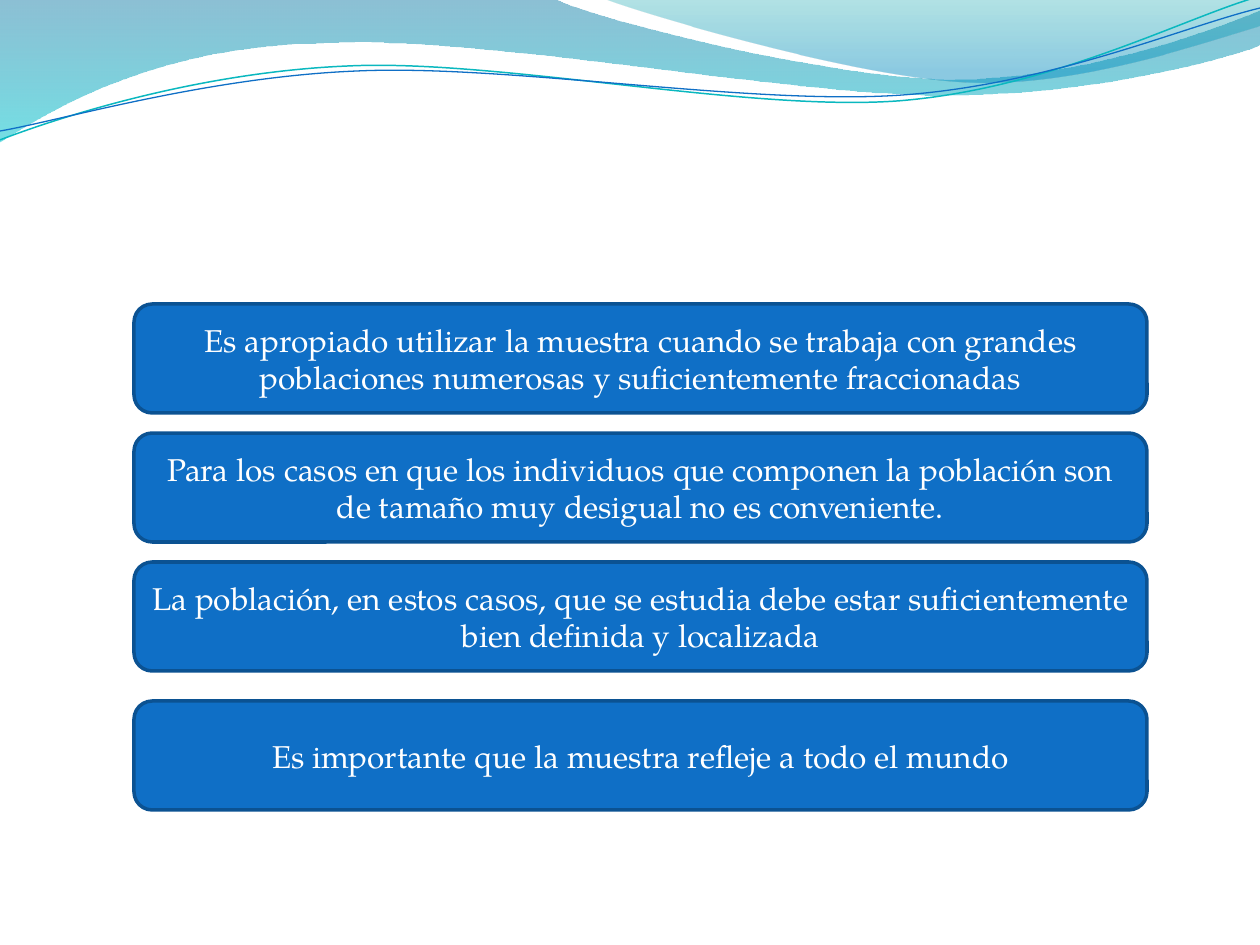
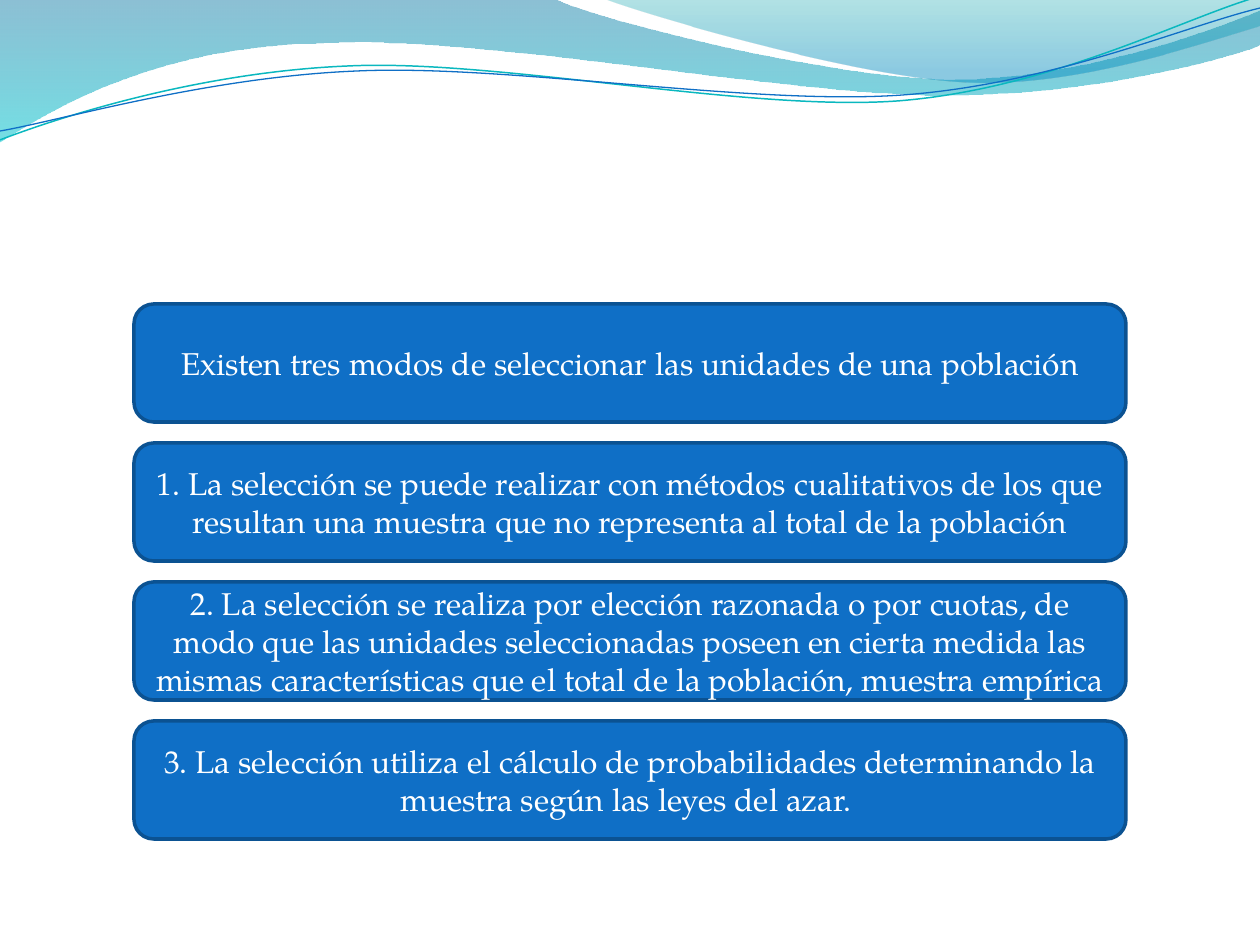
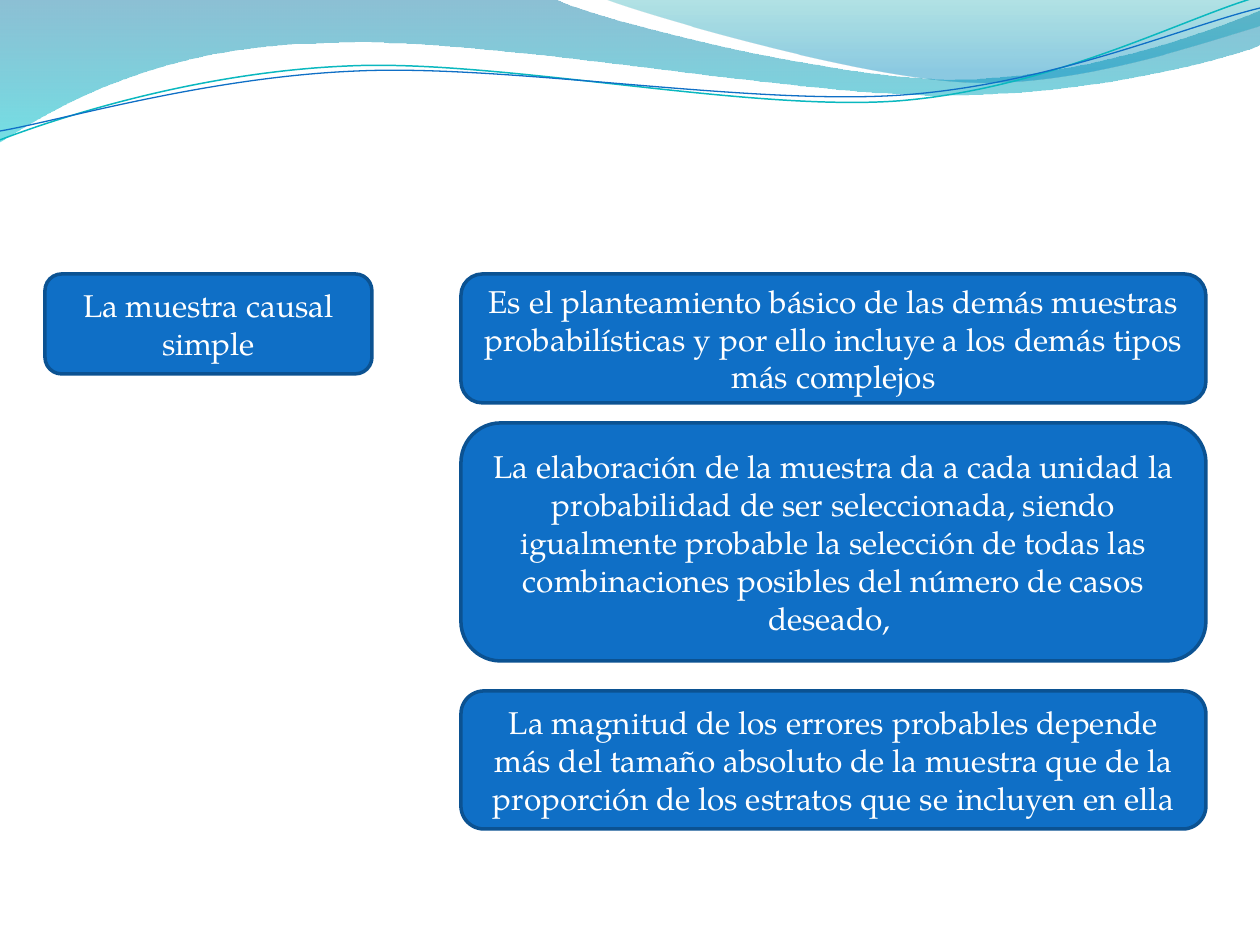
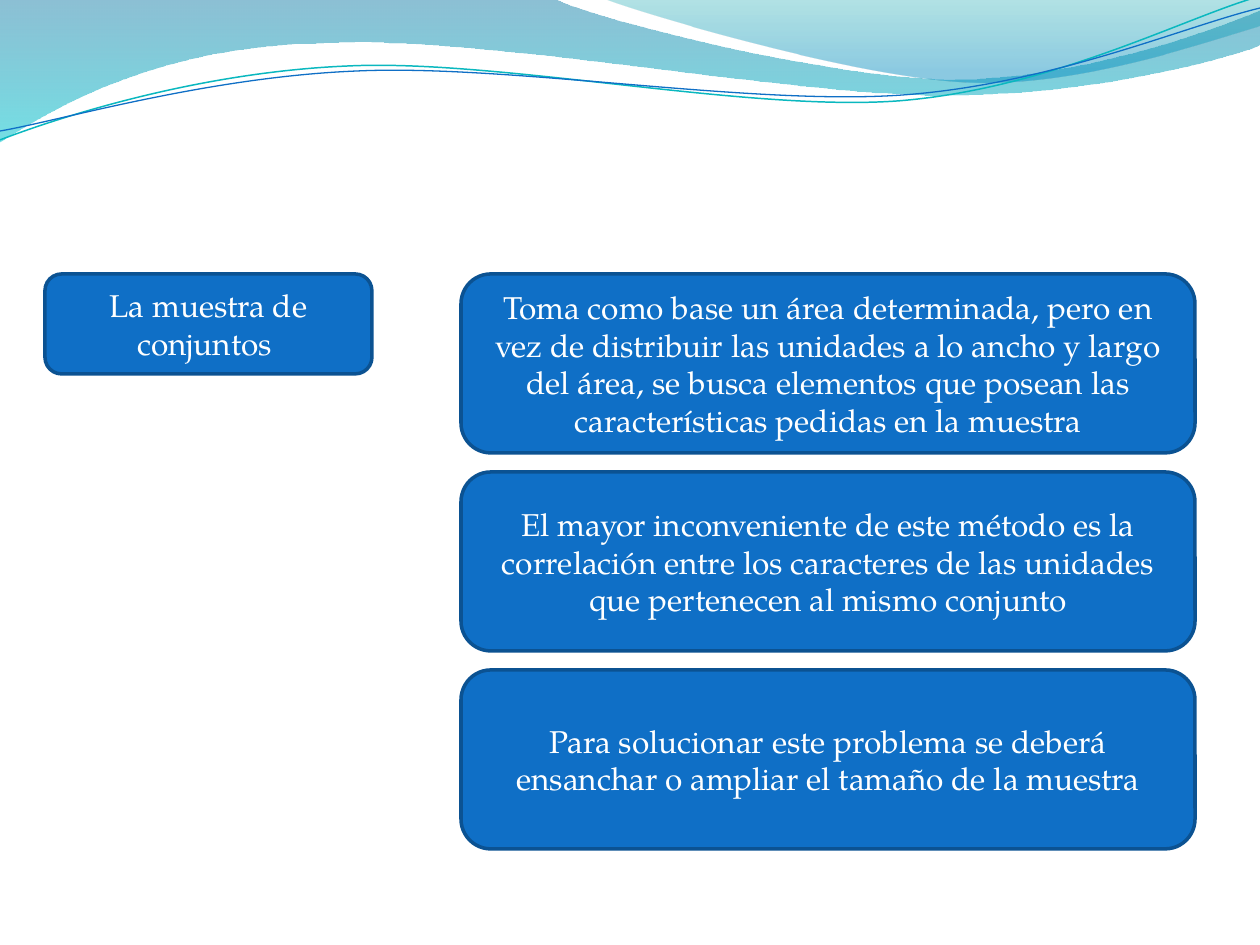
"""Build four slides on choosing a sample, under a shared wave header."""
from math import cos, radians, sin

from lxml.etree import SubElement
from pptx import Presentation
from pptx.dml.color import RGBColor
from pptx.enum.shapes import MSO_SHAPE
from pptx.enum.text import MSO_ANCHOR, PP_ALIGN
from pptx.oxml.ns import qn
from pptx.util import Inches, Pt

PX = Inches(1) / 126
FONT = "TeX Gyre Pagella"
WHITE = RGBColor(0xFF, 0xFF, 0xFF)
BLUE = RGBColor(0x0F, 0x6F, 0xC6)
NAVY = RGBColor(0x0B, 0x52, 0x92)
TEAL = RGBColor(0x0A, 0xB8, 0xBF)
WAVE_TOP = RGBColor(0x00, 0x74, 0xA1)
WAVE_BOTTOM = RGBColor(0x00, 0xC6, 0xCF)
CREST_TOP = RGBColor(0x00, 0xA1, 0xA9)
CREST_BOTTOM = RGBColor(0x00, 0x8B, 0xBF)

WAVE = [
    [(0, 0)], [(554, -1)],
    [(600, 21), (837, 79), (955, 79)],
    [(1074, 79), (1207, 33), (1260, 11)],
    [(1261, 45)],
    [(1239, 55), (1096, 96), (940, 95)],
    [(784, 95), (481, 35), (324, 43)],
    [(163, 45), (58, 105), (-1, 142)],
    [(0, 0)],
]
CREST = [
    [(604, -1)],
    [(641, 14), (859, 78), (969, 82)],
    [(1079, 87), (1211, 40), (1260, 26)],
    [(1260, 0)],
    [(604, -1)],
]
TEAL_LINE = [
    [(0, 140)],
    [(60, 117), (199, 72), (349, 66)],
    [(498, 59), (747, 112), (898, 101)],
    [(1050, 89), (1182, 19), (1257, -3)],
]
BLUE_LINE = [
    [(0, 131)],
    [(59, 121), (207, 77), (357, 71)],
    [(508, 64), (752, 106), (903, 95)],
    [(1053, 84), (1185, 26), (1260, 8)],
]
TILT = -2.7
TILT_CENTRE = (629, 73)

USE_TEXTS = [
    "Es apropiado utilizar la muestra cuando se trabaja con grandes poblaciones "
    "numerosas y suficientemente fraccionadas",
    "Para los casos en que los individuos que componen la población son de tamaño "
    "muy desigual no es conveniente.",
    "La población, en estos casos, que se estudia debe estar suficientemente bien "
    "definida y localizada",
    "Es importante que la muestra refleje a todo el mundo",
]
MODE_TEXTS = [
    "Existen tres modos de seleccionar las unidades de una población",
    "1. La selección se puede realizar con métodos cualitativos de los que resultan "
    "una muestra que no representa al total de la población",
    "2. La selección se realiza por elección razonada o por cuotas, de modo que las "
    "unidades seleccionadas poseen en cierta medida las mismas características que "
    "el total de la población, muestra empírica",
    "3. La selección utiliza el cálculo de probabilidades determinando la muestra "
    "según las leyes del azar. ",
]
SIMPLE_TEXTS = [
    "Es el planteamiento básico de las demás muestras probabilísticas y por ello "
    "incluye a los demás tipos más complejos",
    "La elaboración de la muestra da a cada unidad la probabilidad de ser "
    "seleccionada, siendo igualmente probable la selección de todas las "
    "combinaciones posibles del número de casos deseado, ",
    "La magnitud de los errores probables depende más del tamaño absoluto de la "
    "muestra que de la proporción de los estratos que se incluyen en ella",
]
CLUSTER_TEXTS = [
    "Toma como base un área determinada, pero en vez de distribuir las unidades a lo "
    "ancho y largo del área, se busca elementos que posean las características "
    "pedidas en la muestra",
    "El mayor inconveniente de este método es la correlación entre los caracteres de "
    "las unidades que pertenecen al mismo conjunto",
    "Para solucionar este problema se deberá ensanchar o ampliar el tamaño de la "
    "muestra",
]


def px(n):
    """Turn px into EMU."""
    return round(n * PX)


def turn(segments, centre, degrees):
    """Rotate the points of segments clockwise about a centre."""
    c, s = cos(radians(degrees)), sin(radians(degrees))
    cx, cy = centre
    return [[(cx + (x - cx) * c - (y - cy) * s, cy + (x - cx) * s + (y - cy) * c)
             for x, y in seg] for seg in segments]


def add_outline(slide, segments, close):
    """Add a freeform of straight segments and cubic curves."""
    points = [(px(x), px(y)) for seg in segments for x, y in seg]
    builder = slide.shapes.build_freeform(*points[0], scale=1.0)
    builder.add_line_segments(points[1:], close=close)
    sp = builder.convert_to_shape()
    sp.shadow.inherit = False
    steps = iter(list(sp._element.iter(qn("a:lnTo"))))
    for seg in segments[1:]:
        group = [next(steps) for _ in seg]
        if len(group) == 3:
            curve = group[0]
            curve.tag = qn("a:cubicBezTo")
            for step in group[1:]:
                curve.append(step[0])
                step.getparent().remove(step)
    return sp


def add_wave(slide, segments, stops):
    """Add a wave filled by a translucent vertical gradient."""
    sp = add_outline(slide, segments, close=True)
    sp.line.fill.background()
    sp.fill.gradient()
    sp.fill.gradient_angle = 270
    for stop, (position, color, _) in zip(sp.fill.gradient_stops, stops):
        stop.position = position
        stop.color.rgb = color
    colors = sp._element.spPr.iter(qn("a:srgbClr"))
    for clr, (_, _, opacity) in zip(list(colors), stops):
        SubElement(clr, qn("a:alpha")).set("val", str(opacity * 1000))


def add_wave_line(slide, segments, color, width):
    """Add a tilted thin curve."""
    sp = add_outline(slide, turn(segments, TILT_CENTRE, -TILT), close=False)
    sp.rotation = TILT
    sp.fill.background()
    sp.line.color.rgb = color
    sp.line.width = Pt(width)


def add_header(slide):
    """Draw the waves and move them to the layout that all slides share."""
    add_wave(slide, WAVE, [(0, WAVE_TOP, 45), (1, WAVE_BOTTOM, 55)])
    add_wave(slide, CREST, [(0, CREST_TOP, 30), (0.8, CREST_BOTTOM, 45)])
    add_wave_line(slide, TEAL_LINE, TEAL, 0.85)
    add_wave_line(slide, BLUE_LINE, BLUE, 0.75)
    layout = slide.slide_layout
    for placeholder in list(layout.placeholders):
        layout.shapes._spTree.remove(placeholder._element)
    for sp in list(slide.shapes):
        layout.shapes._spTree.append(sp._element)


def add_slide(prs):
    """Add a blank slide."""
    return prs.slides.add_slide(prs.slide_layouts[6])


def write(sp, text, size=18, color=WHITE, align=PP_ALIGN.CENTER):
    """Write one formatted paragraph in a shape."""
    tf = sp.text_frame
    tf.word_wrap = True
    tf.vertical_anchor = MSO_ANCHOR.MIDDLE
    p = tf.paragraphs[0]
    p.alignment = align
    r = p.add_run()
    r.text = text
    r.font.name = FONT
    r.font.size = Pt(size)
    r.font.color.rgb = color


def add_box(slide, text, x, y, w, h):
    """Add a rounded blue box with text."""
    sp = slide.shapes.add_shape(MSO_SHAPE.ROUNDED_RECTANGLE, px(x), px(y), px(w), px(h))
    sp.shadow.inherit = False
    sp.fill.solid()
    sp.fill.fore_color.rgb = BLUE
    sp.line.color.rgb = NAVY
    sp.line.width = Pt(2)
    write(sp, text)


def add_stack(slide, texts, x, w, rows):
    """Add boxes down one column, each row a top and a height."""
    for text, (y, h) in zip(texts, rows):
        add_box(slide, text, x, y, w, h)


def add_topic(prs, topic, texts, w, rows):
    """Add a slide with a topic on the left and its points on the right."""
    s = add_slide(prs)
    add_box(s, topic, 45, 274, 327, 100)
    add_stack(s, texts, 461, w, rows)


def main():
    """Build and save the slides."""
    prs = Presentation()
    prs.slide_width, prs.slide_height = px(1260), px(945)
    s = add_slide(prs)
    add_header(s)
    add_stack(s, USE_TEXTS, 134, 1013, [(y, 109) for y in (304, 433, 562, 701)])
    add_stack(add_slide(prs), MODE_TEXTS, 134, 992,
              [(304 + 139 * i, 118) for i in range(4)])
    add_topic(prs, "La muestra causal simple", SIMPLE_TEXTS, 745,
              [(274, 129), (423, 238), (691, 138)])
    add_topic(prs, "La muestra de conjuntos ", CLUSTER_TEXTS, 734,
              [(274 + 198 * i, 179) for i in range(3)])
    prs.save("out.pptx")


if __name__ == "__main__":
    main()
